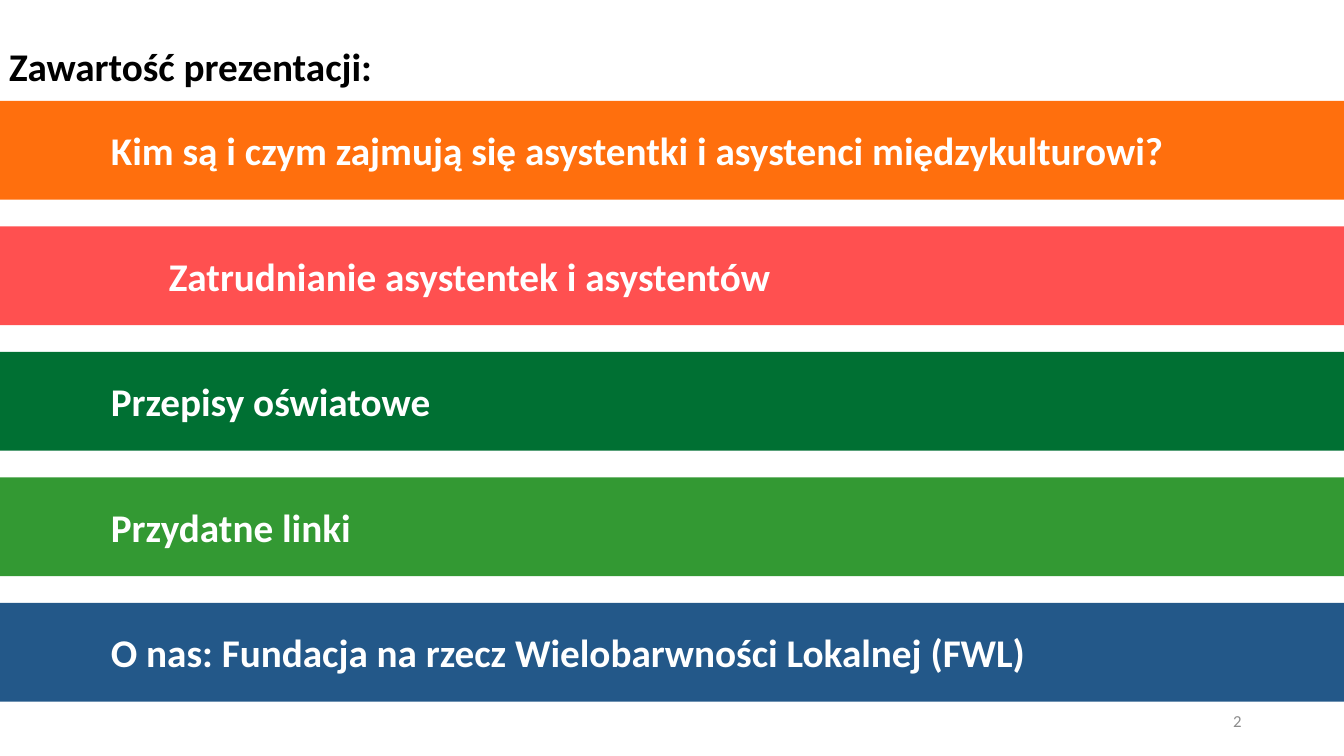
import dataclasses

import pptx
import pptx.dml.color
import pptx.enum.shapes
import pptx.enum.text
import pptx.util

Pt = pptx.util.Pt
Align = pptx.enum.text.PP_ALIGN


@dataclasses.dataclass(frozen=True)
class Theme:
    """Colours, font and type sizes of the slide."""

    font: str = "Calibri"
    heading_size: float = 28
    number_size: float = 12
    dark: str = "000000"
    light: str = "FFFFFF"
    muted: str = "8C8C8C"
    orange: str = "FF6F0D"
    coral: str = "FF5050"
    forest: str = "007033"
    green: str = "339933"
    blue: str = "235889"


@dataclasses.dataclass(frozen=True)
class Box:
    """A region of the slide, in points."""

    left: float
    top: float
    width: float
    height: float

    def place(self, shape):
        """Move and size a shape to fill this box."""
        shape.left, shape.top = Pt(self.left), Pt(self.top)
        shape.width, shape.height = Pt(self.width), Pt(self.height)


THEME = Theme()
SLIDE_WIDTH, SLIDE_HEIGHT = 960, 540
BAND_HEIGHT = 70.6
TAB_INDENT = 72
SECTIONS = [
    ("Kim są i czym zajmują się asystentki i asystenci międzykulturowi?", THEME.orange, TAB_INDENT),
    ("Zatrudnianie asystentek i asystentów", THEME.coral, 113.5),
    ("Przepisy oświatowe", THEME.forest, TAB_INDENT),
    ("Przydatne linki", THEME.green, TAB_INDENT),
    ("O nas: Fundacja na rzecz Wielobarwności Lokalnej (FWL)", THEME.blue, TAB_INDENT),
]


def color(value):
    """Turn a hexadecimal string into a colour."""
    return pptx.dml.color.RGBColor.from_string(value)


def write_line(shape, text, size, ink, bold=False, align=Align.LEFT, indent=0):
    """Write one vertically centred line of text into a shape."""
    frame = shape.text_frame
    frame.word_wrap = True
    frame.auto_size = pptx.enum.text.MSO_AUTO_SIZE.NONE
    frame.vertical_anchor = pptx.enum.text.MSO_ANCHOR.MIDDLE
    frame.margin_left = frame.margin_right = Pt(7.2)
    frame.margin_top = frame.margin_bottom = Pt(3.6)
    if indent:
        frame.margin_left = Pt(7.2 + indent)
    paragraph = frame.paragraphs[0]
    paragraph.alignment = align
    run = paragraph.add_run()
    run.text = text
    run.font.name = THEME.font
    run.font.size = Pt(size)
    run.font.bold = bold
    run.font.color.rgb = color(ink)


def add_heading(slide, box):
    """Fill the title placeholder with the slide heading."""
    title = slide.shapes.title
    box.place(title)
    write_line(title, "Zawartość prezentacji:", THEME.heading_size, THEME.dark, bold=True)


def add_sections(slide, box):
    """Stack one coloured band per section, evenly spread over the box."""
    pitch = (box.height - BAND_HEIGHT) / (len(SECTIONS) - 1)
    for index, (text, fill, indent) in enumerate(SECTIONS):
        band = slide.shapes.add_shape(
            pptx.enum.shapes.MSO_SHAPE.RECTANGLE,
            Pt(box.left), Pt(box.top + index * pitch), Pt(box.width), Pt(BAND_HEIGHT),
        )
        band.shadow.inherit = False
        band.fill.solid()
        band.fill.fore_color.rgb = color(fill)
        band.line.fill.background()
        write_line(band, text, THEME.heading_size, THEME.light, bold=True, indent=indent)


def add_page_number(slide, box):
    """Write the page number at the right of the box."""
    number = slide.shapes.add_textbox(0, 0, 0, 0)
    box.place(number)
    write_line(number, "2", THEME.number_size, THEME.muted, align=Align.RIGHT)


def main():
    """Build and save the contents slide."""
    presentation = pptx.Presentation()
    presentation.slide_width = Pt(SLIDE_WIDTH)
    presentation.slide_height = Pt(SLIDE_HEIGHT)
    slide = presentation.slides.add_slide(presentation.slide_layouts.get_by_name("Title Only"))
    add_heading(slide, Box(-0.7, 18.9, SLIDE_WIDTH, 56))
    add_sections(slide, Box(0, 72, SLIDE_WIDTH, 429.2))
    add_page_number(slide, Box(678, 500.5, 216, 28.8))
    presentation.save("out.pptx")


if __name__ == "__main__":
    main()
